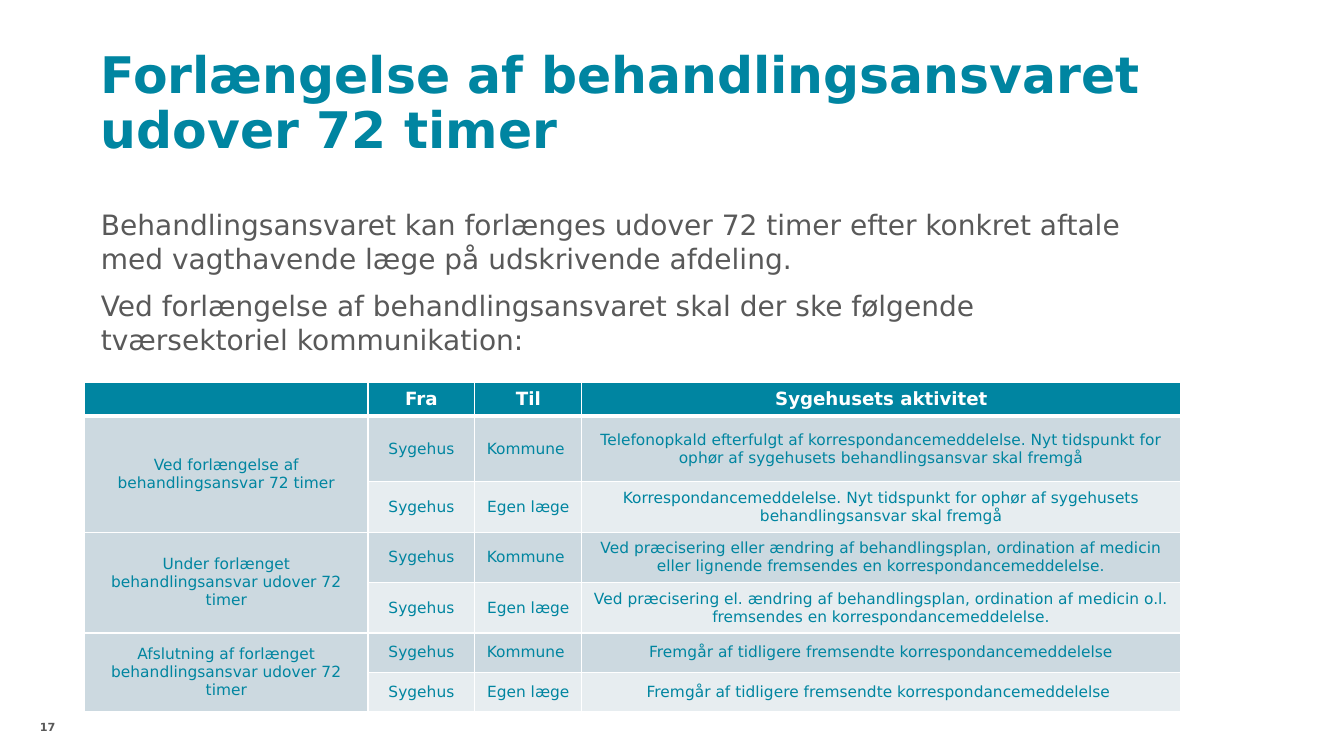
from dataclasses import dataclass

from lxml.etree import SubElement
from pptx import Presentation
from pptx.dml.color import RGBColor
from pptx.enum.text import MSO_ANCHOR, PP_ALIGN
from pptx.oxml.ns import qn
from pptx.slide import Slide
from pptx.table import Table, _Cell
from pptx.text.text import _Paragraph
from pptx.util import Inches, Pt

FONT = "DejaVu Sans"
TEAL = RGBColor(0x00, 0x85, 0xA1)
CELL_TEAL = RGBColor(0x00, 0x85, 0xA0)
GREY = RGBColor(0x59, 0x59, 0x59)
WHITE = RGBColor(0xFF, 0xFF, 0xFF)
DARK_BAND = RGBColor(0xCC, 0xD9, 0xE0)
LIGHT_BAND = RGBColor(0xE7, 0xED, 0xF0)


@dataclass(frozen=True)
class TextStyle:
    size: float
    color: RGBColor
    bold: bool = False
    align: PP_ALIGN = PP_ALIGN.LEFT
    line_spacing: float | Pt | None = None
    space_before: float = 0


@dataclass(frozen=True)
class TextBlock:
    left: float
    top: float
    width: float
    height: float
    paragraphs: tuple[str, ...]
    style: TextStyle
    anchor: MSO_ANCHOR = MSO_ANCHOR.TOP


@dataclass(frozen=True)
class Phase:
    name: str
    to_municipality: str
    to_doctor: str


TITLE = TextStyle(36, TEAL, bold=True, line_spacing=0.9)
BODY = TextStyle(20, GREY, line_spacing=Pt(24), space_before=10)
PAGE_NUMBER = TextStyle(8, GREY, bold=True, align=PP_ALIGN.RIGHT)
HEADER = TextStyle(13, WHITE, bold=True, align=PP_ALIGN.CENTER)
CELL = TextStyle(11, CELL_TEAL, align=PP_ALIGN.CENTER)

TEXT_BLOCKS = (
    TextBlock(1, 2.06, 10.28, 4.8, (
        "Behandlingsansvaret kan forlænges udover 72 timer efter konkret aftale "
        "med vagthavende læge på udskrivende afdeling.",
        "Ved forlængelse af behandlingsansvaret skal der ske følgende "
        "tværsektoriel kommunikation:",
    ), BODY),
    TextBlock(0.16, 7.15, 0.39, 0.35, ("17",), PAGE_NUMBER),
    TextBlock(1, 0.4, 10.55, 1.18,
              ("Forlængelse af behandlingsansvaret udover 72 timer",),
              TITLE, MSO_ANCHOR.BOTTOM),
)

COLUMN_WIDTHS = (2.81, 1.06, 1.06, 5.94)
ROW_HEIGHTS = (0.34, 0.65, 0.5, 0.5, 0.5, 0.39, 0.39)
HEADINGS = ("", "Fra", "Til", "Sygehusets aktivitet")
PHASES = (
    Phase("Ved forlængelse af behandlingsansvar 72 timer",
          "Telefonopkald efterfulgt af korrespondancemeddelelse. Nyt tidspunkt "
          "for ophør af sygehusets behandlingsansvar skal fremgå",
          "Korrespondancemeddelelse. Nyt tidspunkt for ophør af sygehusets "
          "behandlingsansvar skal fremgå"),
    Phase("Under forlænget behandlingsansvar udover 72 timer",
          "Ved præcisering eller ændring af behandlingsplan, ordination af "
          "medicin eller lignende fremsendes en korrespondancemeddelelse.",
          "Ved præcisering el. ændring af behandlingsplan, ordination af "
          "medicin o.l. fremsendes en korrespondancemeddelelse."),
    Phase("Afslutning af forlænget behandlingsansvar udover 72 timer",
          "Fremgår af tidligere fremsendte korrespondancemeddelelse",
          "Fremgår af tidligere fremsendte korrespondancemeddelelse "),
)


def write_paragraph(paragraph: _Paragraph, text: str, style: TextStyle) -> None:
    paragraph.alignment = style.align
    if style.line_spacing is not None:
        paragraph.line_spacing = style.line_spacing
    if not text:
        # An empty cell still needs a text size, or its row grows
        SubElement(paragraph._p, qn("a:endParaRPr"), sz=str(int(style.size * 100)))
        return
    run = paragraph.add_run()
    run.text = text
    run.font.name = FONT
    run.font.size = Pt(style.size)
    run.font.bold = style.bold
    run.font.color.rgb = style.color


def add_text_block(slide: Slide, block: TextBlock) -> None:
    shape = slide.shapes.add_textbox(Inches(block.left), Inches(block.top),
                                     Inches(block.width), Inches(block.height))
    frame = shape.text_frame
    frame.word_wrap = True
    frame.vertical_anchor = block.anchor
    frame.margin_left = frame.margin_right = 0
    frame.margin_top = frame.margin_bottom = 0
    for index, text in enumerate(block.paragraphs):
        paragraph = frame.add_paragraph() if index else frame.paragraphs[0]
        if index:
            paragraph.space_before = Pt(block.style.space_before)
        write_paragraph(paragraph, text, block.style)


def set_borders(cell: _Cell, top: float, bottom: float) -> None:
    properties = cell._tc.get_or_add_tcPr()
    for side, width in (("L", 1), ("R", 1), ("T", top), ("B", bottom)):
        line = SubElement(properties, qn(f"a:ln{side}"), w=str(Pt(width)))
        fill = SubElement(line, qn("a:solidFill"))
        SubElement(fill, qn("a:srgbClr"), val=str(WHITE))


def fill_row(table: Table, row: int, texts: tuple[str, ...],
             style: TextStyle, color: RGBColor) -> None:
    for column, text in enumerate(texts):
        cell = table.cell(row, column)
        set_borders(cell, top=3 if row == 1 else 1, bottom=3 if row == 0 else 1)
        cell.fill.solid()
        # The phase column keeps the dark band through both of its rows
        cell.fill.fore_color.rgb = DARK_BAND if row and column == 0 else color
        cell.vertical_anchor = MSO_ANCHOR.MIDDLE
        write_paragraph(cell.text_frame.paragraphs[0], text, style)


def add_communication_table(slide: Slide) -> None:
    table = slide.shapes.add_table(
        len(ROW_HEIGHTS), len(COLUMN_WIDTHS), Inches(0.84), Inches(3.79),
        Inches(sum(COLUMN_WIDTHS)), Inches(sum(ROW_HEIGHTS))).table
    for column, width in zip(table.columns, COLUMN_WIDTHS):
        column.width = Inches(width)
    for row, height in zip(table.rows, ROW_HEIGHTS):
        row.height = Inches(height)

    fill_row(table, 0, HEADINGS, HEADER, TEAL)
    for index, phase in enumerate(PHASES):
        first = 1 + 2 * index
        fill_row(table, first,
                 (phase.name, "Sygehus", "Kommune ", phase.to_municipality),
                 CELL, DARK_BAND)
        fill_row(table, first + 1,
                 ("", "Sygehus", "Egen læge", phase.to_doctor),
                 CELL, LIGHT_BAND)
        table.cell(first, 0).merge(table.cell(first + 1, 0))


def main() -> None:
    presentation = Presentation()
    presentation.slide_width = Inches(13.33)
    presentation.slide_height = Inches(7.5)
    slide = presentation.slides.add_slide(presentation.slide_layouts[6])

    # Title, body text and page number
    for block in TEXT_BLOCKS:
        add_text_block(slide, block)

    # Who informs whom in each phase
    add_communication_table(slide)

    presentation.save("out.pptx")


if __name__ == "__main__":
    main()
